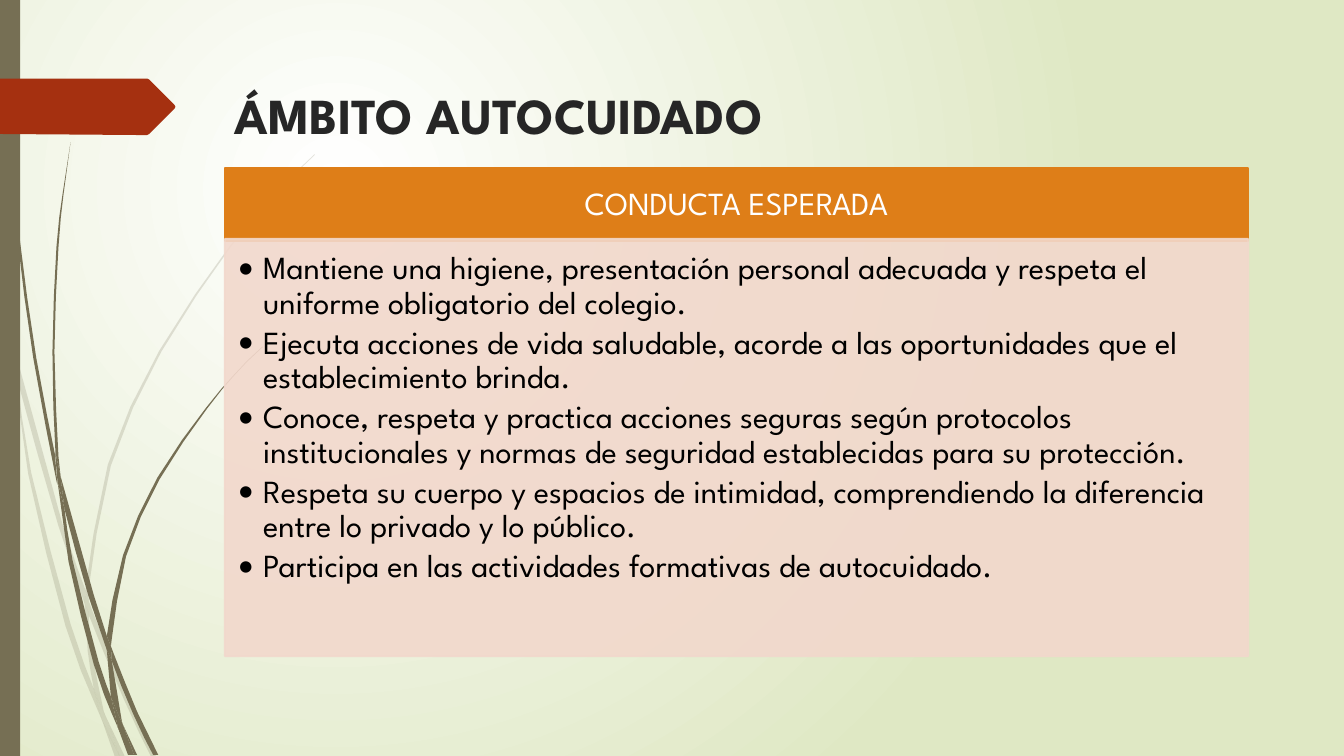
from pptx import Presentation
from pptx import util as u
from pptx.dml.color import RGBColor
from pptx.enum import shapes, text
from pptx.oxml import ns
from lxml import etree

PX = 9144  # 100 px to the inch
WIDE, HIGH = 1333, 750
FONT = "League Spartan"
WHITE = RGBColor(0xFF, 0xFF, 0xFF)
BLACK = RGBColor(0, 0, 0)
INK = RGBColor(0x26, 0x26, 0x26)
GREEN = RGBColor(0xDF, 0xE8, 0xC4)
OLIVE = RGBColor(0x76, 0x6F, 0x54)
RED = RGBColor(0xA5, 0x30, 0x10)
ORANGE = RGBColor(0xDE, 0x7E, 0x18)
PINK = RGBColor(0xF2, 0xD8, 0xCC)

# Outlines of the grass, blade by blade
FAINT = [
    [(11, 350), (9, 322), (0, 282), (0, 299), (10, 344)],
    [(58, 522), (84, 599), (85, 586), (62, 520), (14, 345), (17, 376)],
    [(92, 607), (88, 596), (88, 610), (123, 694), (150, 751), (155, 751),
     (127, 692)],
    [(119, 751), (124, 751), (105, 711)],
    [(93, 683), (70, 619), (31, 469), (17, 376), (11, 350), (28, 470),
     (65, 621), (92, 693), (101, 714), (99, 707)],
    [(84, 599), (87, 646), (93, 683), (96, 692), (105, 711), (103, 706),
     (91, 646), (88, 610), (88, 608)],
    [(88, 584), (110, 462), (160, 349), (229, 245), (268, 198), (290, 175),
     (312, 154), (312, 153), (289, 175), (268, 197), (228, 244), (158, 348),
     (107, 461), (85, 584), (85, 586), (88, 596)],
    [(101, 714), (114, 751), (119, 751)],
    [(88, 608), (88, 610), (88, 596), (85, 586), (84, 599)],
    [(96, 692), (93, 683), (99, 707), (101, 714), (119, 751), (105, 711)],
]
DARK = [
    [(7, 110), (17, 233), (33, 355), (56, 477), (57, 481), (55, 457),
     (55, 453), (36, 355), (19, 232), (8, 109), (5, 48), (4, 0), (3, 0),
     (4, 48)],
    [(88, 592), (106, 645), (106, 631), (93, 590), (60, 472), (64, 505)],
    [(113, 649), (110, 641), (111, 656), (132, 708), (152, 749), (157, 749),
     (136, 706)],
    [(110, 691), (98, 657), (72, 556), (64, 505), (57, 477), (68, 557),
     (93, 659), (111, 708), (117, 722), (116, 717)],
    [(60, 472), (58, 453), (54, 349), (58, 245), (63, 193), (70, 141),
     (62, 193), (56, 245), (52, 349), (55, 449)],
    [(133, 749), (136, 749), (122, 719)],
    [(57, 477), (64, 505), (60, 472), (55, 449), (55, 453)],
    [(111, 633), (125, 552), (158, 476), (205, 406), (231, 374), (245, 359),
     (261, 344), (260, 344), (245, 358), (231, 373), (204, 405), (156, 474),
     (122, 551), (106, 631), (110, 641)],
    [(117, 722), (127, 749), (131, 749)],
    [(106, 645), (110, 691), (116, 706), (122, 719), (121, 716), (111, 656),
     (109, 651)],
    [(106, 645), (109, 651), (111, 656), (110, 641), (106, 631)],
    [(116, 706), (110, 691), (116, 717), (117, 722), (130, 749), (133, 749),
     (122, 719)],
]
TAB = [(0, 0), (146, 0), (148, 1), (173, 26), (174, 28), (173, 30),
       (148, 55), (146, 56), (136, 56), (0, 55)]
HEAD = "CONDUCTA ESPERADA"
ITEMS = [
    "Mantiene una higiene, presentación personal adecuada y respeta el "
    "uniforme obligatorio del colegio.",
    "Ejecuta acciones de vida saludable, acorde a las oportunidades que el "
    "establecimiento brinda.",
    "Conoce, respeta y practica acciones seguras según protocolos "
    "institucionales y normas de seguridad establecidas para su protección.",
    "Respeta su cuerpo y espacios de intimidad, comprendiendo la diferencia "
    "entre lo privado y lo público.",
    "Participa en las actividades formativas de autocuidado.",
]


def paint(shape, color, line=None, alpha=100):
    shape.shadow.inherit = False
    shape.fill.solid()
    shape.fill.fore_color.rgb = color
    if line:
        shape.line.color.rgb = color
        shape.line.width = u.Pt(line)
    else:
        shape.line.fill.background()
    if alpha < 100:
        for tone in shape.element.spPr.iter(ns.qn("a:srgbClr")):
            etree.SubElement(tone, ns.qn("a:alpha"), val=str(alpha * 1000))
    return shape


def block(slide, box, color, **look):
    shape = slide.shapes.add_shape(shapes.MSO_SHAPE.RECTANGLE,
                                   *[n * PX for n in box])
    return paint(shape, color, **look)


def write(shape, lines, size, color, bold=False, align=text.PP_ALIGN.LEFT,
          anchor=text.MSO_ANCHOR.MIDDLE, pads=(10, 5, 10, 5), space=1.0,
          after=0, bullet=None):
    frame = shape.text_frame
    frame.word_wrap = True
    frame.vertical_anchor = anchor
    (frame.margin_left, frame.margin_top,
     frame.margin_right, frame.margin_bottom) = [n * PX for n in pads]
    for i, line in enumerate(lines):
        para = frame.add_paragraph() if i else frame.paragraphs[0]
        para.alignment, para.line_spacing = align, space
        para.space_after = u.Pt(after)
        run = para.add_run()
        run.text = line
        run.font.name, run.font.size = FONT, u.Pt(size)
        run.font.bold, run.font.color.rgb = bold, color
        if bullet:
            para.level = 1
            props = para._p.get_or_add_pPr()
            props.set("marL", str(25 * PX))
            props.set("indent", str(-25 * PX))
            etree.SubElement(props, ns.qn("a:buFont"), typeface="+mn-lt")
            etree.SubElement(props, ns.qn("a:buChar"), char=bullet)


def dot(a, b, c):
    return sum((q - p) * (r - q) for p, q, r in zip(a, b, c))


def curve(dots):
    """Add a rounded midpoint to each long side that has no sharp end."""
    full = []
    for i, b in enumerate(dots):
        a, c, d = dots[i - 1], *[dots[(i + k) % len(dots)] for k in (1, 2)]
        full.append(b)
        if abs(c[1] - b[1]) > 30 and dot(a, b, c) > 0 and dot(b, c, d) > 0:
            full.append([(9 * (q + r) - p - s) / 16
                         for p, q, r, s in zip(a, b, c, d)])
    return full


def outline(home, dots, color, x=0, y=0, alpha=100):
    first, *rest = [(round((x + a) * PX), round((y + b) * PX))
                    for a, b in dots]
    form = home.shapes.build_freeform(*first)
    form.add_line_segments(rest, close=True)
    paint(form.convert_to_shape(), color, alpha=alpha)


def backdrop(slide):
    fill = slide.background.fill
    fill.gradient()
    for stop, color, place in zip(fill.gradient_stops, (WHITE, GREEN), (0, 1)):
        stop.color.rgb, stop.position = color, place
    grad = slide.element.find(".//" + ns.qn("a:gradFill"))
    grad.remove(grad.find(ns.qn("a:lin")))
    ring = etree.SubElement(grad, ns.qn("a:path"), {"path": "circle"})
    etree.SubElement(ring, ns.qn("a:fillToRect"),
                     l="50000", t="50000", r="100000", b="100000")


def margin(slide, x, y, w, h):
    # Grass, side bar and arrow tab
    for blades, alpha in ((FAINT, 20), (DARK, 100)):
        tuft = slide.shapes.add_group_shape()
        for dots in blades:
            outline(tuft, curve(dots), OLIVE, x, y, alpha)
    block(slide, (x, y, w, h), OLIVE)
    outline(slide, TAB, RED, x, y + 78)


def title(slide, x, y, w, h):
    box = slide.shapes.add_textbox(x * PX, y * PX, w * PX, h * PX)
    write(box, ["ÁMBITO AUTOCUIDADO"], 36, INK, bold=True)


def panel(slide, x, y, w, h):
    # Heading band, then the bulleted list
    band, top = 72, 70
    head = block(slide, (x, y, w, band), ORANGE, line=1.25)
    write(head, [HEAD], 23, WHITE, align=text.PP_ALIGN.CENTER,
          pads=(18, 10, 18, 10), space=0.9)
    body = block(slide, (x, y + top, w, h - top), PINK, line=1.25, alpha=90)
    write(body, ITEMS, 23, BLACK, anchor=text.MSO_ANCHOR.TOP,
          pads=(13, 13, 18, 20), space=0.9, after=3.5, bullet="•")


def main():
    deck = Presentation()
    deck.slide_width, deck.slide_height = WIDE * PX, HIGH * PX
    slide = deck.slides.add_slide(deck.slide_layouts[6])
    backdrop(slide)
    margin(slide, 0, 0, 20, HIGH)
    title(slide, 223, 77, 975, 73)
    panel(slide, 223, 167, 1015, 484)
    deck.save("out.pptx")


if __name__ == "__main__":
    main()
